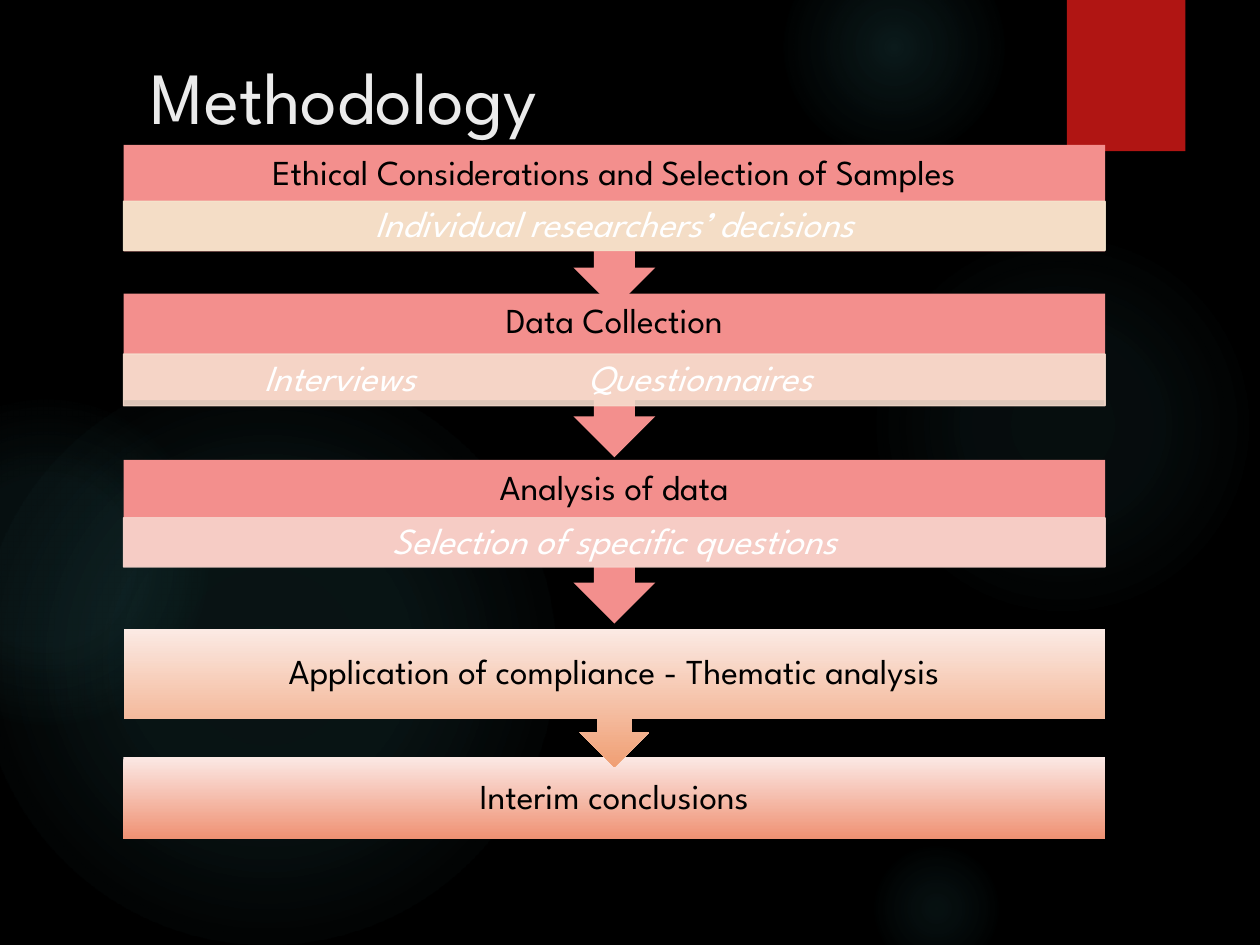
"""Build the Methodology slide: a five-step research process."""
from lxml import etree
from pptx import Presentation
from pptx.dml.color import RGBColor
from pptx.enum.shapes import MSO_SHAPE
from pptx.enum.text import MSO_ANCHOR, PP_ALIGN
from pptx.oxml import parse_xml
from pptx.oxml.ns import nsdecls, qn
from pptx.util import Cm, Pt

OVAL, RECT, CALLOUT = MSO_SHAPE.OVAL, MSO_SHAPE.RECTANGLE, MSO_SHAPE.UP_ARROW_CALLOUT
MIDDLE, LEFT, CENTER = MSO_ANCHOR.MIDDLE, PP_ALIGN.LEFT, PP_ALIGN.CENTER
FONT = "League Spartan"
COLORS = {
    "background": "000000", "glow": "50B9C1", "ribbon": "B01513", "title": "EBEBEB",
    "heading": "000000", "detail": "FFFFFF", "step": "F38F8D",
    "ethics": "F5E6CD", "collection": "F6DCCD", "analysis": "F7D3CC",
    "application top": "FBEAE4", "application bottom": "F09F74",
    "conclusions top": "FBE8E4", "conclusions bottom": "EF9173",
}
DOWNWARD = '<a:lin ang="5400000" scaled="0"/>'
OUTWARD = '<a:path path="circle"><a:fillToRect l="50000" t="50000" r="50000" b="50000"/></a:path>'

prs = Presentation()
prs.slide_width, prs.slide_height = Cm(25.4), Cm(19.05)
slide = prs.slides.add_slide(prs.slide_layouts[6])
slide.background.fill.solid()
slide.background.fill.fore_color.rgb = RGBColor.from_string(COLORS["background"])


def add_block(kind, place, colour, stops=None, direction=DOWNWARD):
    block = slide.shapes.add_shape(kind, *map(Cm, place))
    block.shadow.inherit = False
    block.line.fill.background()
    block.fill.solid()
    block.fill.fore_color.rgb = RGBColor.from_string(COLORS[colour])
    if stops:
        stop_list = "".join(
            f'<a:gs pos="{position * 1000}"><a:srgbClr val="{COLORS[name]}">'
            f'<a:alpha val="{alpha * 1000}"/></a:srgbClr></a:gs>'
            for position, name, alpha in stops)
        properties = block._element.spPr
        properties.replace(properties.find(qn("a:solidFill")), parse_xml(
            f'<a:gradFill {nsdecls("a")} rotWithShape="0">'
            f'<a:gsLst>{stop_list}</a:gsLst>{direction}</a:gradFill>'))
    return block


def add_label(text, place, size, colour, inset, align=CENTER, spacing=0.9):
    frame = slide.shapes.add_textbox(*map(Cm, place)).text_frame
    frame.word_wrap = True
    frame.vertical_anchor = MIDDLE
    frame.margin_left = frame.margin_right = Cm(inset[0])
    frame.margin_top = frame.margin_bottom = Cm(inset[1])
    paragraph = frame.paragraphs[0]
    paragraph.text = text
    paragraph.alignment = align
    paragraph.line_spacing = spacing
    paragraph.font.name = FONT
    paragraph.font.size = Pt(size)
    paragraph.font.color.rgb = RGBColor.from_string(COLORS[colour])
    return paragraph


glows = [
    (17.5, 4.65, 7.82, (7, 6), 69),
    (15.8, -1.27, 4.45, (14, 7), 73),
    (17.5, 16.94, 2.74, (9, 5), 66),
    (-0.43, 7.42, 11.63, (11, 10), 75),
    (-2.34, 8.05, 6.55, (8, 8), 72),
]
for left, top, diameter, (core, halo), edge in glows:
    add_block(OVAL, (left, top, diameter, diameter), "glow",
              [(0, "glow", core), (36, "glow", halo), (edge, "glow", 0)], OUTWARD)

add_block(RECT, (21.51, 0, 2.39, 3.05), "ribbon")
add_label("Methodology", (2.79, 0.71, 19.79, 2.41), 42, "title", (0.25, 0.13), LEFT, 1.0)

STEP_LEFT, STEP_WIDTH = 2.49, 19.79
steps = [
    ("Interim conclusions", RECT, 15.27, 1.65, 1.65, "conclusions", None),
    ("Application of compliance - Thematic analysis", CALLOUT, 12.67, 2.79, 1.8,
     "application", None),
    ("Analysis of data", CALLOUT, 9.27, 3.3, 1.17, "step",
     ("Selection of specific questions", 10.44, 0.99, "analysis")),
    ("Data Collection", CALLOUT, 5.92, 3.3, 1.17, "step",
     ("\tInterviews\tQuestionnaires", 7.14, 1.04, "collection")),
    ("Ethical Considerations and Selection of Samples", CALLOUT, 2.92, 3.3, 1.17, "step",
     ("Individual researchers’ decisions", 4.06, 0.99, "ethics")),
]
for heading, kind, top, height, heading_height, colour, detail in steps:
    place = (STEP_LEFT, top, STEP_WIDTH, height)
    if colour == "step":
        step = add_block(kind, place, colour)
    else:
        step = add_block(kind, place, f"{colour} top",
                         [(0, f"{colour} top", 100), (100, f"{colour} bottom", 100)])
    if kind == CALLOUT:
        step.rotation = 180
    add_label(heading, (STEP_LEFT, top, STEP_WIDTH, heading_height), 20, "heading", (0.4, 0.4))
    if detail:
        wording, band_top, band_height, band_colour = detail
        place = (STEP_LEFT, band_top, STEP_WIDTH, band_height)
        band = add_block(RECT, place, band_colour)
        band.line.color.rgb = RGBColor.from_string(COLORS[band_colour])
        band.line.width = Pt(0.75)
        for tint in band._element.spPr.iter(qn("a:srgbClr")):
            etree.SubElement(tint, qn("a:alpha"), val="90000")
        tabbed = "\t" in wording
        line = add_label(wording, place, 21, "detail", (0.4, 0.08), LEFT if tabbed else CENTER)
        line.font.italic = True
        if tabbed:
            tabs = etree.Element(qn("a:tabLst"))
            for position in (2.43, 8.96):
                etree.SubElement(tabs, qn("a:tab"), pos=str(Cm(position)), algn="l")
            line._p.pPr.find(qn("a:lnSpc")).addnext(tabs)

prs.save("out.pptx")
